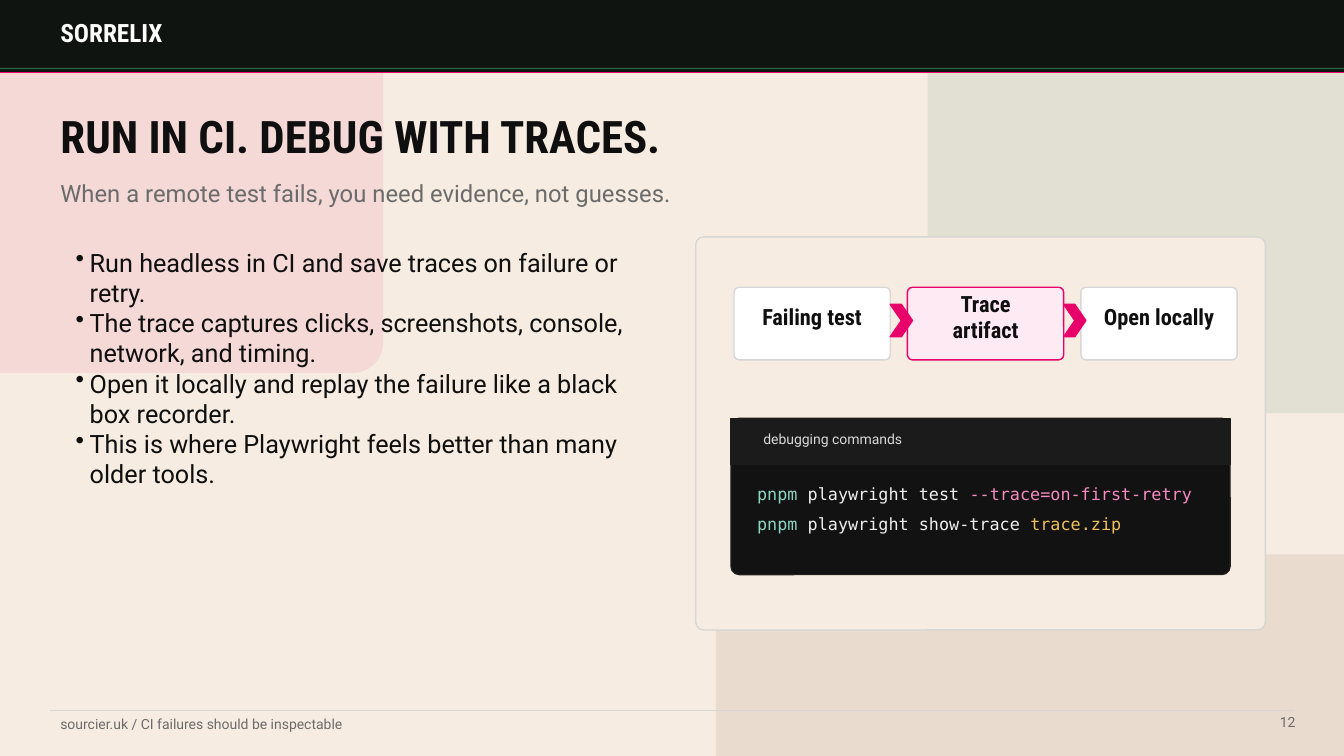
from lxml.etree import SubElement
from pptx import Presentation
from pptx.dml.color import RGBColor
from pptx.enum.shapes import MSO_CONNECTOR, MSO_SHAPE
from pptx.enum.text import MSO_ANCHOR, MSO_AUTO_SIZE, PP_ALIGN
from pptx.oxml.ns import qn
from pptx.util import Inches, Pt

W, H = 13.33, 7.5
INK, GREY, RULE = "0F0F0F", "6B6B6B", "D7D7D7"
PINK, GREEN, PAPER, WHITE = "E8006A", "2A7D5B", "F6ECE1", "FFFFFF"
HEAD, BODY, MONO = "Roboto Condensed", "Roboto", "DejaVu Sans Mono"
FORMATS = {
    "brand": dict(name=HEAD, size=Pt(18), bold=True),
    "title": dict(name=HEAD, size=Pt(32), bold=True),
    "subtitle": dict(name=BODY, size=Pt(17), bold=False),
    "bullet": dict(name=BODY, size=Pt(18), bold=False),
    "stage": dict(name=HEAD, size=Pt(16), bold=True),
    "small": dict(name=BODY, size=Pt(10), bold=False),
    "code": dict(name=MONO, size=Pt(12), bold=False),
}
BULLETS = [
    "Run headless in CI and save traces on failure or retry.",
    "The trace captures clicks, screenshots, console, network, and timing.",
    "Open it locally and replay the failure like a black box recorder.",
    "This is where Playwright feels better than many older tools.",
]
STAGES = [
    ("Failing test", WHITE, RULE),
    ("Trace artifact", "FDEAF2", PINK),
    ("Open locally", WHITE, RULE),
]
COMMANDS = [
    [("pnpm ", "8BD6C0"), ("playwright test ", "EFEFEF"),
     ("--trace=on-first-retry", "F58AC1")],
    [("pnpm ", "8BD6C0"), ("playwright show-trace ", "EFEFEF"),
     ("trace.zip", "F0C15A")],
]


def rgb(color):
    """Turn a hex string into a colour."""
    return RGBColor.from_string(color)


def set_alpha(fill, percent):
    """Make a solid fill partly transparent."""
    color = fill._xPr.find(qn("a:solidFill"))[0]
    SubElement(color, qn("a:alpha"), val=str(percent * 1000))


def add_box(s, kind, x, y, w, h, fill, line=None, radius=None, alpha=None):
    """Add a flat preset shape; radius is in inches."""
    sp = s.shapes.add_shape(kind, *map(Inches, (x, y, w, h)))
    sp.shadow.inherit = False
    sp.fill.solid()
    sp.fill.fore_color.rgb = rgb(fill)
    if alpha:
        set_alpha(sp.fill, alpha)
    if line:
        sp.line.color.rgb = rgb(line)
        sp.line.width = Pt(1)
    else:
        sp.line.fill.background()
    if radius:
        sp.adjustments[0] = radius / min(w, h)
    return sp


def add_rule(s, x1, x2, y, color, alpha=None):
    """Add a horizontal line."""
    ln = s.shapes.add_connector(MSO_CONNECTOR.STRAIGHT, *map(Inches, (x1, y, x2, y)))
    ln.line.color.rgb = rgb(color)
    ln.line.width = Pt(1)
    if alpha:
        set_alpha(ln.line.fill, alpha)
    SubElement(ln._element.spPr, qn("a:effectLst"))


def set_frame(sp, insets=(0.1, 0.05, 0.1, 0.05), anchor=MSO_ANCHOR.MIDDLE):
    """Prepare the text frame of a shape."""
    tf = sp.text_frame
    left, top, right, bottom = map(Inches, insets)
    values = dict(word_wrap=True, auto_size=MSO_AUTO_SIZE.NONE, vertical_anchor=anchor,
                  margin_left=left, margin_top=top, margin_right=right,
                  margin_bottom=bottom)
    for key, value in values.items():
        setattr(tf, key, value)
    return tf


def write(p, runs, style, align=PP_ALIGN.LEFT):
    """Fill a paragraph with (text, colour) runs in one style."""
    p.alignment = align
    for text, color in runs:
        r = p.add_run()
        r.text = text
        for key, value in FORMATS[style].items():
            setattr(r.font, key, value)
        r.font.color.rgb = rgb(color)


def add_text(s, x, y, w, h, runs, style, align=PP_ALIGN.LEFT, **frame):
    """Add a text box with one paragraph."""
    sp = s.shapes.add_textbox(*map(Inches, (x, y, w, h)))
    write(set_frame(sp, **frame).paragraphs[0], runs, style, align)


def add_backdrop(s):
    """Add the background colour and the large tinted panels."""
    s.background.fill.solid()
    s.background.fill.fore_color.rgb = rgb(PAPER)
    for x, y, w, h, color, alpha in [(-2.1, -1.2, 5.9, 4.9, PINK, 8),
                                     (9.2, -1.5, 6.2, 5.6, GREEN, 10),
                                     (7.1, 5.5, 8.1, 3.4, "E5D8C9", 76)]:
        add_box(s, MSO_SHAPE.ROUNDED_RECTANGLE, x, y, w, h, color,
                radius=0.3, alpha=alpha)


def add_header(s, x, y, w, h):
    """Add the dark top band with its two rules and the name."""
    add_box(s, MSO_SHAPE.RECTANGLE, x, y, w, h, "101410", "101410")
    add_rule(s, x, x + w, y + h, PINK)
    add_rule(s, x, x + w, y + h - 0.04, GREEN, 76)
    add_text(s, x + 0.5, y + 0.17, 2.8, 0.3, [("SORRELIX", WHITE)], "brand")


def add_heading(s, x, y, w, h):
    """Place the title and the subtitle below it."""
    title = s.shapes.title
    s.shapes._spTree.append(title._element)
    title.left, title.top, title.width, title.height = map(Inches, (x, y, w, h))
    write(set_frame(title).paragraphs[0], [("RUN IN CI. DEBUG WITH TRACES.", INK)], "title")
    add_text(s, x, y + 0.72, 10.4, 0.38,
             [("When a remote test fails, you need evidence, not guesses.", GREY)],
             "subtitle", anchor=MSO_ANCHOR.TOP)


def add_bullets(s, x, y, w, h):
    """Add the bulleted list."""
    sp = s.shapes.add_textbox(*map(Inches, (x, y, w, h)))
    tf = set_frame(sp, (0, 0, 0, 0), MSO_ANCHOR.TOP)
    for i, text in enumerate(BULLETS):
        p = tf.add_paragraph() if i else tf.paragraphs[0]
        pPr = p._p.get_or_add_pPr()
        pPr.set("marL", str(Inches(0.14)))
        pPr.set("indent", str(-Inches(0.14)))
        SubElement(pPr, qn("a:buChar"), char="•")
        write(p, [(text, INK)], "bullet")


def add_stages(s, x, y, w, h):
    """Add the row of stages joined by chevrons."""
    pitch = w + 0.17
    for i, (label, fill, line) in enumerate(STAGES):
        sp = add_box(s, MSO_SHAPE.ROUNDED_RECTANGLE, x + i * pitch, y, w, h,
                     fill, line, radius=0.05)
        tf = set_frame(sp, (0.2, 0, 0.2, 0.14))
        write(tf.paragraphs[0], [(label, INK)], "stage", PP_ALIGN.CENTER)
    for i in range(len(STAGES) - 1):
        add_box(s, MSO_SHAPE.CHEVRON, x + i * pitch + w, y + 0.17, 0.22, 0.32, PINK, PINK)


def add_terminal(s, x, y, w, h):
    """Add the code window with its caption bar and commands."""
    add_box(s, MSO_SHAPE.ROUNDED_RECTANGLE, x, y, w, h, "121212", "1F1F1F", radius=0.08)
    bar = add_box(s, MSO_SHAPE.RECTANGLE, x, y, w, 0.46, "1B1B1B", "1B1B1B")
    write(set_frame(bar, (0.32, 0, 0.1, 0.06)).paragraphs[0],
          [("debugging commands", "D9D9D9")], "small")
    for i, runs in enumerate(COMMANDS):
        add_text(s, x + 0.26, y + 0.64 + i * 0.3, w - 0.52, 0.22, runs, "code",
                 insets=(0, 0, 0, 0))


def add_trace_card(s, x, y, w, h):
    """Add the card holding the stages and the code window."""
    add_box(s, MSO_SHAPE.ROUNDED_RECTANGLE, x, y, w, h, PAPER, RULE, radius=0.08)
    add_stages(s, x + 0.38, y + 0.5, 1.55, 0.72)
    add_terminal(s, x + 0.35, y + 1.8, w - 0.7, 1.55)


def add_footer(s, x, y, w):
    """Add the bottom rule, source line and page number."""
    add_rule(s, x, x + w, y, RULE)
    add_text(s, x, y + 0.03, 6, 0.2,
             [("sourcier.uk / CI failures should be inspectable", GREY)], "small")
    add_text(s, x + w - 1.08, y + 0.03, 1.1, 0.2, [("12", GREY)], "small",
             PP_ALIGN.RIGHT, insets=(0, 0, 0, 0), anchor=MSO_ANCHOR.TOP)


def main():
    """Build the slide and save it."""
    prs = Presentation()
    prs.slide_width, prs.slide_height = Inches(W), Inches(H)
    s = prs.slides.add_slide(prs.slide_layouts[5])
    add_backdrop(s)
    add_header(s, 0, 0, W, 0.72)
    add_heading(s, 0.5, 1, 8.9, 0.7)
    add_bullets(s, 0.75, 2.45, 5.7, 3.6)
    add_trace_card(s, 6.9, 2.35, 5.65, 3.9)
    add_footer(s, 0.5, 7.05, W - 1)
    prs.save("out.pptx")


if __name__ == "__main__":
    main()
